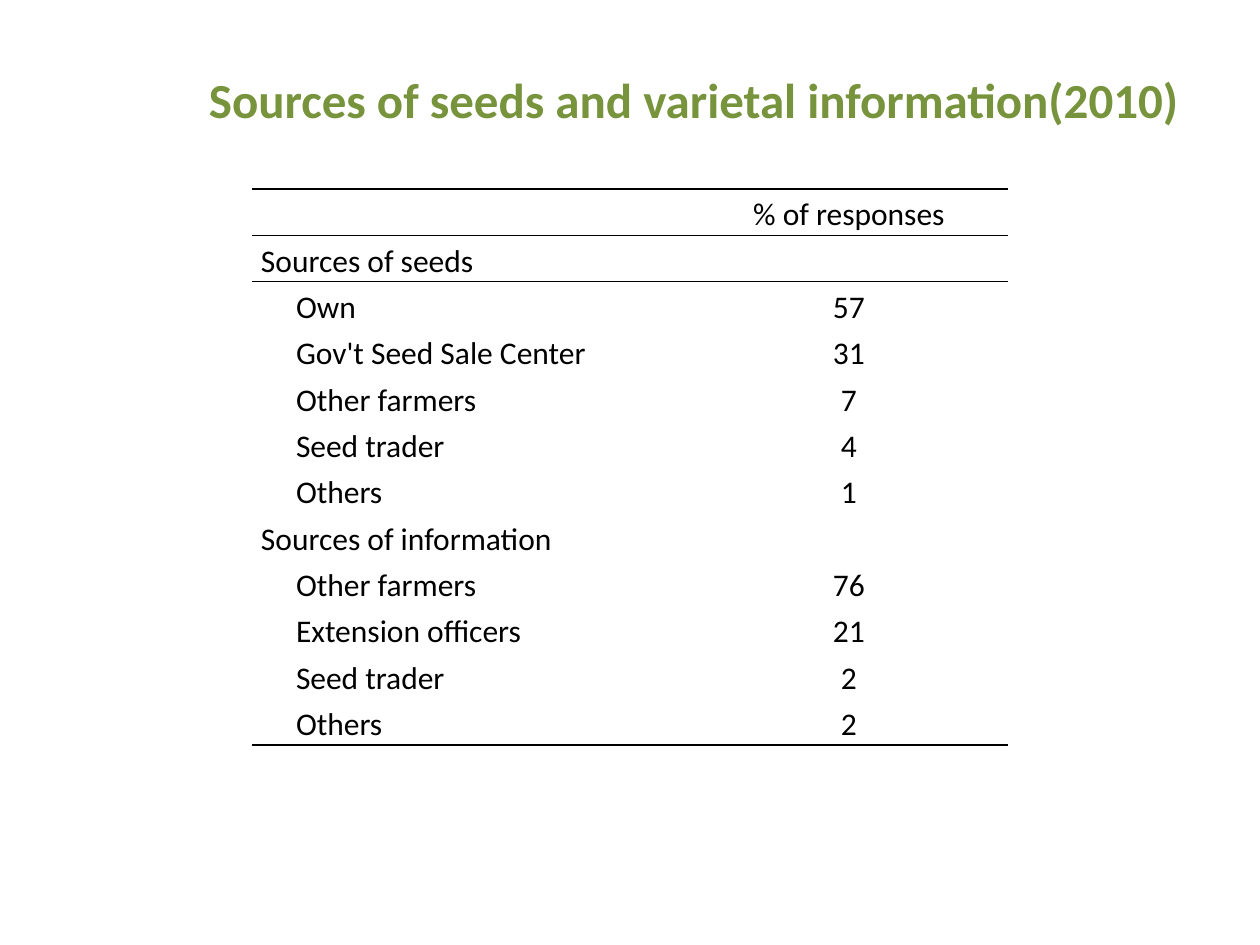
from lxml import etree
from pptx import Presentation
from pptx.dml.color import RGBColor
from pptx.enum.text import MSO_ANCHOR, PP_ALIGN
from pptx.oxml.ns import qn
from pptx.util import Emu, Pt

PX = 914400 // 126
BLACK = RGBColor(0x00, 0x00, 0x00)
GREEN = RGBColor(0x77, 0x93, 0x3C)
LEFT, CENTER = PP_ALIGN.LEFT, PP_ALIGN.CENTER
MIDDLE = MSO_ANCHOR.MIDDLE
PLAIN_TABLE = "{2D5ABB26-0587-4C30-8999-92F81FD0307C}"

HEADER = ("", "% of responses")
GROUPS = {
    "Sources of seeds": [
        ("Own", 57),
        ("Gov't Seed Sale Center", 31),
        ("Other farmers", 7),
        ("Seed trader", 4),
        ("Others", 1),
    ],
    "Sources of information": [
        ("Other farmers", 76),
        ("Extension officers", 21),
        ("Seed trader", 2),
        ("Others", 2),
    ],
}


class SlideBuilder:
    font_name = "Calibri"
    title_size = 28
    table_size = 18
    line_spacing = 1.15
    cell_margin = 9
    indent = 35

    def __init__(self, page):
        self.page = page

    def px(self, length):
        return Emu(length * PX)

    def style(self, para, size, color, bold=False):
        para.font.name = self.font_name
        para.font.size = Pt(size)
        para.font.bold = bold
        para.font.color.rgb = color

    def title(self, text, left, top, width, height):
        box = self.page.shapes.add_textbox(*map(self.px, (left, top, width, height)))
        box.text_frame.word_wrap = False
        para = box.text_frame.paragraphs[0]
        para.text = text
        para.alignment = CENTER
        self.style(para, self.title_size, GREEN, bold=True)

    def border(self, cell, side):
        properties = cell._tc.get_or_add_tcPr()
        line = etree.Element(qn("a:ln" + side), w=str(Pt(1)))
        fill = etree.SubElement(line, qn("a:solidFill"))
        etree.SubElement(fill, qn("a:srgbClr"), val=str(BLACK))
        properties.insert(0, line)

    def cell(self, cell, text, alignment, indented, sides):
        cell.fill.background()
        cell.vertical_anchor = MIDDLE
        cell.margin_left = cell.margin_right = self.px(self.cell_margin)
        cell.margin_top = cell.margin_bottom = 0
        para = cell.text_frame.paragraphs[0]
        para.text = text
        para.alignment = alignment
        para.line_spacing = self.line_spacing
        if indented:
            para._p.get_or_add_pPr().set("indent", str(self.px(self.indent)))
        self.style(para, self.table_size, BLACK)
        for side in sides:
            self.border(cell, side)

    def table(self, rows, left, top, widths, height):
        frame = self.page.shapes.add_table(
            len(rows), len(widths), *map(self.px, (left, top, sum(widths), height))
        )
        table = frame.table
        table._tbl.tblPr.find(qn("a:tableStyleId")).text = PLAIN_TABLE
        table.first_row = table.horz_banding = False
        for column, width in zip(table.columns, widths):
            column.width = self.px(width)
        last = len(rows) - 1
        borders = {0: "BT", 1: "T", last: "B"}
        for index, (label, value) in enumerate(rows):
            sides = borders.get(index, "")
            indented = index > 0 and value != ""
            self.cell(table.cell(index, 0), label, LEFT, indented, sides)
            self.cell(table.cell(index, 1), str(value), CENTER, False, sides)


def main():
    deck = Presentation()
    deck.slide_width = Emu(1260 * PX)
    deck.slide_height = Emu(945 * PX)
    page = deck.slides.add_slide(deck.slide_layouts[6])
    builder = SlideBuilder(page)

    rows = [HEADER]
    for heading, answers in GROUPS.items():
        rows += [(heading, ""), *answers]
    builder.table(rows, left=252, top=189, widths=(438, 318), height=556)
    builder.title(
        "Sources of seeds and varietal information(2010)",
        left=190, top=63, width=1007, height=72,
    )
    deck.save("out.pptx")


if __name__ == "__main__":
    main()
